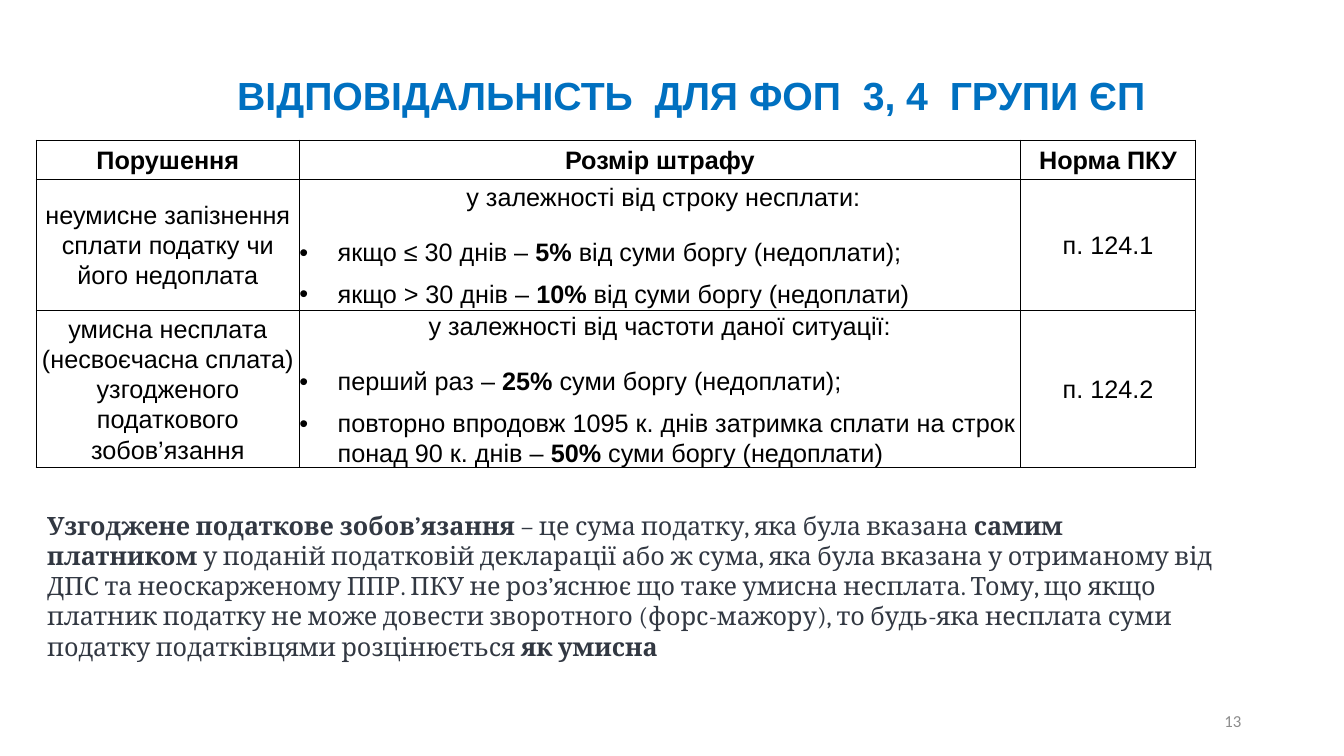
from dataclasses import dataclass

from lxml import etree
from pptx import Presentation
from pptx.dml.color import RGBColor
from pptx.enum import text as text_enum
from pptx.oxml import ns
from pptx.util import Inches, Pt

ALIGN = text_enum.PP_ALIGN
ANCHOR = text_enum.MSO_ANCHOR


@dataclass(frozen=True)
class Theme:
    title_color: str = "0070C0"
    table_color: str = "000000"
    note_color: str = "323842"
    number_color: str = "8C8C8C"
    main_font: str = "Arial"
    note_font: str = "Cambria"
    number_font: str = "Calibri"
    title_size: int = 28
    body_size: int = 18
    number_size: int = 12


THEME = Theme()

HEADERS = ["Порушення", "Розмір штрафу", "Норма ПКУ"]
VIOLATIONS = [
    (
        "неумисне запізнення сплати податку чи його недоплата",
        " у залежності від строку несплати:",
        [
            "якщо ≤ 30 днів – **5%** від суми боргу (недоплати);",
            "якщо > 30 днів – **10%** від суми боргу (недоплати)",
        ],
        "п. 124.1",
    ),
    (
        "умисна несплата (несвоєчасна сплата) узгодженого податкового зобов’язання",
        "у залежності від частоти даної ситуації:",
        [
            "перший раз – **25%** суми боргу (недоплати);",
            "повторно впродовж 1095 к. днів затримка сплати на строк "
            "понад 90 к. днів – **50%** суми боргу (недоплати)",
        ],
        "п. 124.2",
    ),
]
NOTE = (
    "**Узгоджене податкове зобов’язання** – це сума податку, яка була вказана "
    "**самим платником** у поданій податковій декларації або ж сума, яка була "
    "вказана у отриманому від ДПС та неоскарженому ППР. ПКУ не роз’яснює що таке "
    "умисна несплата. Тому, що якщо платник податку не може довести зворотного "
    "(форс-мажору), то будь-яка несплата суми податку податківцями розцінюється "
    "**як умисна**"
)


def write(paragraph, content, font=THEME.main_font, size=THEME.body_size,
          color=THEME.table_color, bold=False, align=ALIGN.LEFT,
          line_spacing=1.0, space_after=0):
    """Fill a paragraph; parts between double asterisks are bold."""
    paragraph.alignment = align
    paragraph.line_spacing = line_spacing
    paragraph.space_before = Pt(0)
    paragraph.space_after = Pt(space_after)
    for index, part in enumerate(content.split("**")):
        if not part:
            continue
        run = paragraph.add_run()
        run.text = part
        run.font.name = font
        run.font.size = Pt(size)
        run.font.bold = bold or index % 2 == 1
        run.font.color.rgb = RGBColor.from_string(color)


def add_bullet(paragraph, indent=Inches(0.38)):
    properties = paragraph._p.get_or_add_pPr()
    properties.set("marL", str(indent))
    properties.set("indent", str(-indent))
    etree.SubElement(properties, ns.qn("a:buFont")).set("typeface", THEME.main_font)
    etree.SubElement(properties, ns.qn("a:buChar")).set("char", "•")


def add_borders(cell):
    properties = cell._tc.get_or_add_tcPr()
    for position, side in enumerate("LRTB"):
        line = etree.Element(ns.qn(f"a:ln{side}"), w=str(Pt(1)))
        fill = etree.SubElement(line, ns.qn("a:solidFill"))
        etree.SubElement(fill, ns.qn("a:srgbClr")).set("val", THEME.table_color)
        properties.insert(position, line)


def format_cell(cell):
    cell.margin_left = cell.margin_right = cell.margin_top = cell.margin_bottom = 0
    cell.vertical_anchor = ANCHOR.MIDDLE
    cell.fill.background()
    add_borders(cell)


def add_title(slide, left, top, width, height):
    title = slide.shapes.title
    title.left, title.top, title.width, title.height = left, top, width, height
    frame = title.text_frame
    frame.auto_size = text_enum.MSO_AUTO_SIZE.NONE
    frame.vertical_anchor = ANCHOR.MIDDLE
    write(frame.paragraphs[0], "ВІДПОВІДАЛЬНІСТЬ  ДЛЯ ФОП  3, 4  ГРУПИ ЄП",
          size=THEME.title_size, color=THEME.title_color, bold=True,
          align=ALIGN.CENTER, line_spacing=0.9)


def add_penalty_cell(cell, condition, penalties):
    frame = cell.text_frame
    write(frame.paragraphs[0], condition, align=ALIGN.CENTER,
          line_spacing=1.07, space_after=18)
    for penalty in penalties:
        paragraph = frame.add_paragraph()
        write(paragraph, penalty, line_spacing=1.07, space_after=8)
        add_bullet(paragraph)


def add_penalty_table(slide, left, top, width, height):
    column_widths = [Inches(2.61), Inches(7.15)]
    row_heights = [Inches(0.39), Inches(1.3)]
    column_widths.append(width - sum(column_widths))
    row_heights.append(height - sum(row_heights))
    table = slide.shapes.add_table(len(row_heights), len(column_widths),
                                   left, top, width, height).table
    table.first_row = table.horz_banding = False
    for column, column_width in zip(table.columns, column_widths):
        column.width = column_width
    for row, row_height in zip(table.rows, row_heights):
        row.height = row_height
    for cell in table.iter_cells():
        format_cell(cell)

    for column, header in enumerate(HEADERS):
        write(table.cell(0, column).text_frame.paragraphs[0], header, bold=True,
              align=ALIGN.CENTER, line_spacing=1.07)
    for row, (violation, condition, penalties, norm) in enumerate(VIOLATIONS, 1):
        for column, content in ((0, violation), (2, norm)):
            write(table.cell(row, column).text_frame.paragraphs[0], content,
                  align=ALIGN.CENTER, line_spacing=1.07)
        add_penalty_cell(table.cell(row, 1), condition, penalties)


def add_text_box(slide, left, top, width, height, content,
                 anchor=ANCHOR.TOP, **text_format):
    frame = slide.shapes.add_textbox(left, top, width, height).text_frame
    frame.word_wrap = True
    frame.vertical_anchor = anchor
    write(frame.paragraphs[0], content, **text_format)


def main():
    presentation = Presentation()
    presentation.slide_width = Inches(13.33)
    presentation.slide_height = Inches(7.5)
    slide = presentation.slides.add_slide(
        presentation.slide_layouts.get_by_name("Title Only"))

    add_title(slide, Inches(0.19), Inches(0.64), Inches(13.33), Inches(0.67))
    add_penalty_table(slide, Inches(0.36), Inches(1.39), Inches(11.5), Inches(3.25))
    add_text_box(slide, Inches(0.37), Inches(5.01), Inches(11.78), Inches(1.62),
                 NOTE, font=THEME.note_font, color=THEME.note_color)
    add_text_box(slide, Inches(9.41), Inches(6.95), Inches(3), Inches(0.4), "13",
                 anchor=ANCHOR.MIDDLE, font=THEME.number_font,
                 size=THEME.number_size, color=THEME.number_color,
                 align=ALIGN.RIGHT)
    presentation.save("out.pptx")


if __name__ == "__main__":
    main()
